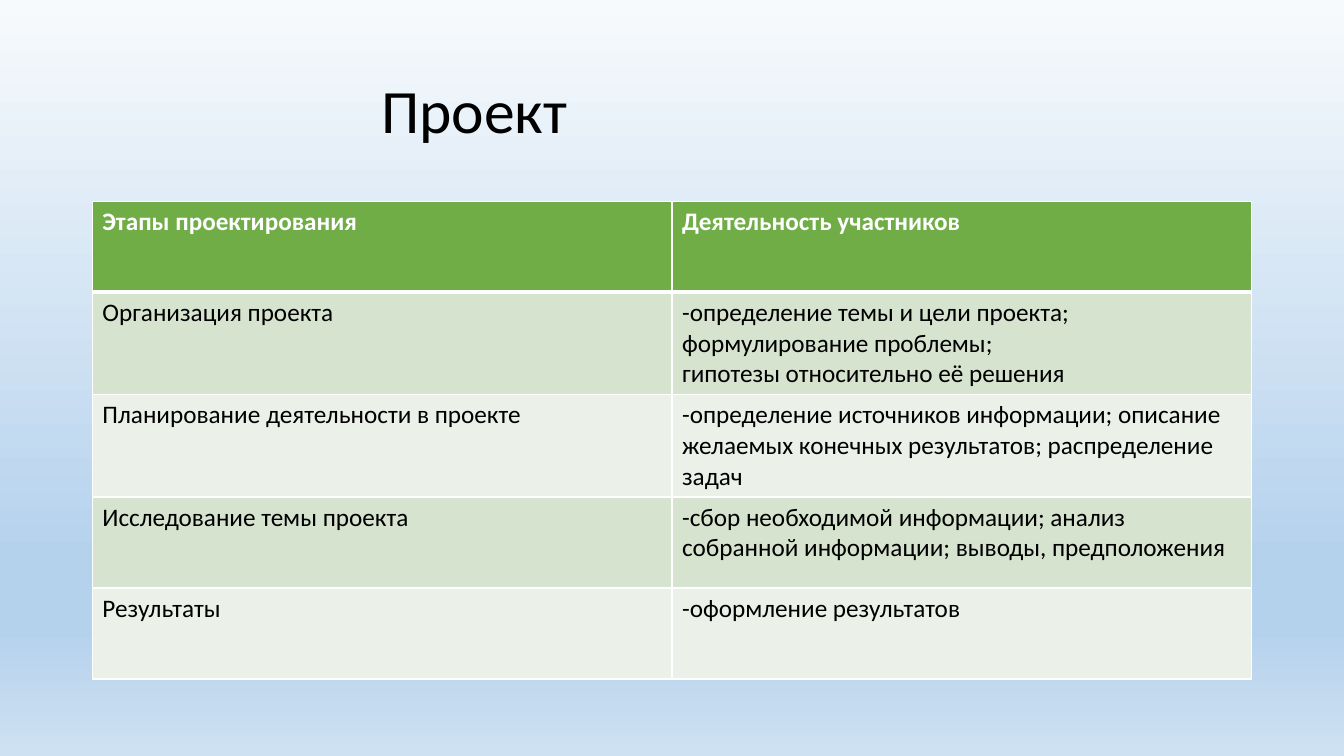
from copy import deepcopy
from dataclasses import dataclass

from lxml import etree
from pptx import Presentation
from pptx import util as u
from pptx.dml.color import RGBColor
from pptx.enum import text
from pptx.oxml.ns import qn


@dataclass(frozen=True)
class Theme:
    font: str = "Calibri"
    title_size: int = 44
    body_size: int = 18
    ink: str = "000000"
    white: str = "FFFFFF"
    header: str = "70AD47"
    bands: tuple = ("D5E3CF", "EBF1E9")
    sky: tuple = ((0, "F7FAFD"), (74, "B5D2EC"), (83, "B5D2EC"), (100, "CEE1F2"))


class SlideBuilder:
    """Draws styled elements on one slide."""

    def __init__(self, slide, theme):
        self.slide = slide
        self.theme = theme

    def style(self, paragraph, size, color, bold=False):
        font = paragraph.font
        font.name, font.size, font.bold = self.theme.font, u.Pt(size), bold
        font.color.rgb = RGBColor.from_string(color)

    def background(self):
        fill = self.slide.background.fill
        fill.gradient()
        fill.gradient_angle = 270
        stops = next(self.slide.element.iter(qn("a:gsLst")))
        pattern = deepcopy(stops[0])
        for stop in list(stops):
            stops.remove(stop)
        for position, color in self.theme.sky:
            stop = deepcopy(pattern)
            stop.set("pos", str(position * 1000))
            for child in list(stop):
                stop.remove(child)
            etree.SubElement(stop, qn("a:srgbClr"), val=color)
            stops.append(stop)

    def title(self, words, left, top, width, height, indent):
        heading = self.slide.shapes.title
        heading.left, heading.top = u.Pt(left), u.Pt(top)
        heading.width, heading.height = u.Pt(width), u.Pt(height)
        frame = heading.text_frame
        frame.text = words
        frame.word_wrap = True
        frame.auto_size = text.MSO_AUTO_SIZE.NONE
        frame.vertical_anchor = text.MSO_ANCHOR.MIDDLE
        paragraph = frame.paragraphs[0]
        paragraph.alignment = text.PP_ALIGN.LEFT
        paragraph.line_spacing = 0.9
        properties = paragraph._p.get_or_add_pPr()
        properties.set("marL", str(u.Pt(indent)))
        properties.set("indent", "0")
        self.style(paragraph, self.theme.title_size, self.theme.ink)

    def borders(self, cell, top, bottom):
        properties = cell._tc.get_or_add_tcPr()
        sides = (("L", 1), ("R", 1), ("T", top), ("B", bottom))
        for place, (side, weight) in enumerate(sides):
            line = etree.Element(qn(f"a:ln{side}"), w=str(u.Pt(weight)))
            solid = etree.SubElement(line, qn("a:solidFill"))
            etree.SubElement(solid, qn("a:srgbClr"), val=self.theme.white)
            properties.insert(place, line)

    def table(self, rows, left, top, width, row_height):
        theme = self.theme
        grid = self.slide.shapes.add_table(
            len(rows), len(rows[0]), u.Pt(left), u.Pt(top),
            u.Pt(width), u.Pt(row_height * len(rows))).table
        for r, row in enumerate(rows):
            grid.rows[r].height = u.Pt(row_height)
            is_header = r == 0
            fill = theme.header if is_header else theme.bands[(r - 1) % 2]
            color = theme.white if is_header else theme.ink
            for c, words in enumerate(row):
                cell = grid.cell(r, c)
                cell.fill.solid()
                cell.fill.fore_color.rgb = RGBColor.from_string(fill)
                self.borders(cell, 3 if r == 1 else 1, 3 if is_header else 1)
                cell.text = words
                for paragraph in cell.text_frame.paragraphs:
                    self.style(paragraph, theme.body_size, color, is_header)


STAGES = [
    ("Этапы проектирования", "Деятельность участников"),
    ("Организация проекта",
     "-определение темы и цели проекта; формулирование проблемы;\n"
     "гипотезы относительно её решения"),
    ("Планирование деятельности в проекте",
     "-определение источников информации; описание желаемых конечных "
     "результатов; распределение задач"),
    ("Исследование темы проекта",
     "-сбор необходимой информации; анализ собранной информации; "
     "выводы, предположения"),
    ("Результаты", "-оформление результатов"),
]


def main():
    deck = Presentation()
    deck.slide_width, deck.slide_height = u.Pt(960), u.Pt(540)
    builder = SlideBuilder(deck.slides.add_slide(deck.slide_layouts[5]), Theme())
    builder.background()
    builder.title("Проект", 66, 28.75, 828, 104.4, indent=199)
    builder.table(STAGES, 66, 143.75, 828, 65)
    deck.save("out.pptx")


if __name__ == "__main__":
    main()
